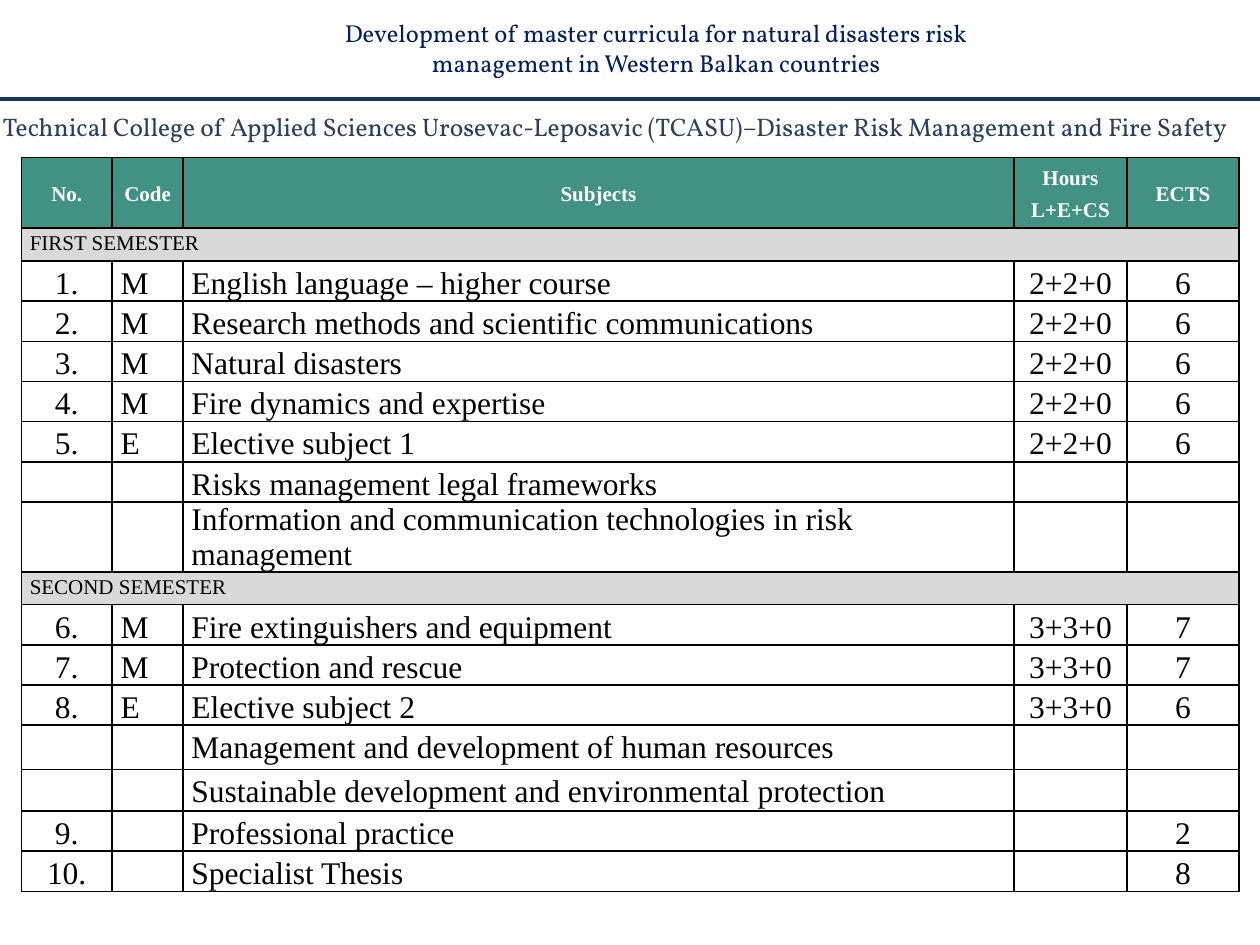
from dataclasses import dataclass

import lxml.etree
import pptx
import pptx.dml.color
import pptx.enum.shapes
import pptx.enum.text
import pptx.oxml.ns
import pptx.util

Cm = pptx.util.Cm
Pt = pptx.util.Pt
ALIGN = pptx.enum.text.PP_ALIGN
ANCHOR = pptx.enum.text.MSO_ANCHOR
qn = pptx.oxml.ns.qn


@dataclass(frozen=True)
class Theme:
    display_font: str = "Vollkorn"
    table_font: str = "Times New Roman"
    project: str = "002060"
    title: str = "254061"
    rule: str = "17375E"
    header_fill: str = "419283"
    header_text: str = "FFFFFF"
    band_fill: str = "D9D9D9"
    ink: str = "000000"
    project_size: float = 14
    title_size: float = 14.5
    label_size: float = 12
    body_size: float = 18
    rule_width: float = 2
    border_width: float = 1


THEME = Theme()

# Widths and heights in centimetres
COLUMN_WIDTHS = (1.83, 1.43, 16.75, 2.28, 2.26)
COLUMN_ALIGNS = (ALIGN.CENTER, ALIGN.LEFT, ALIGN.LEFT, ALIGN.CENTER, ALIGN.CENTER)
HEADER_HEIGHT, BAND_HEIGHT, ROW_HEIGHT = 1.42, 0.66, 0.81
TALL_ROWS = {8: 1.41, 13: 0.89, 14: 0.84}
SINGLE_SPACED_ROW = 8

HEADINGS = ("No.", "Code", "Subjects", "Hours\nL+E+CS", "ECTS")
# A row with one entry is a semester band
ROWS = (
    ("FIRST SEMESTER",),
    ("1.", "M", "English language – higher course", "2+2+0", "6"),
    ("2.", "M", "Research methods and scientific communications", "2+2+0", "6"),
    ("3.", "M", "Natural disasters", "2+2+0", "6"),
    ("4.", "M", "Fire dynamics and expertise", "2+2+0", "6"),
    ("5.", "E", "Elective subject 1", "2+2+0", "6"),
    ("", "", "Risks management legal frameworks", "", ""),
    ("", "", "Information and communication technologies in risk management", "", ""),
    ("SECOND SEMESTER",),
    ("6.", "M", "Fire extinguishers and equipment", "3+3+0", "7"),
    ("7.", "M", "Protection and rescue", "3+3+0", "7"),
    ("8.", "E", "Elective subject 2", "3+3+0", "6"),
    ("", "", "Management and development of human resources", "", ""),
    ("", "", "Sustainable development and environmental protection", "", ""),
    ("9.", "", "Professional practice", "", "2"),
    ("10.", "", "Specialist Thesis", "", "8"),
)


def rgb(value):
    return pptx.dml.color.RGBColor.from_string(value)


def style_paragraph(paragraph, font, size, color, align, bold=False):
    paragraph.alignment = align
    paragraph.font.name = font
    paragraph.font.size = Pt(size)
    paragraph.font.bold = bold
    paragraph.font.color.rgb = rgb(color)


def fill_frame(box, text, size, color, align, anchor):
    frame = box.text_frame
    frame.text = text
    frame.word_wrap = True
    frame.auto_size = pptx.enum.text.MSO_AUTO_SIZE.NONE
    frame.vertical_anchor = anchor
    paragraph = frame.paragraphs[0]
    paragraph.space_before = Pt(0)
    style_paragraph(paragraph, THEME.display_font, size, color, align)


def add_project_header(page, left, top, width, height):
    """Project name with the full-width rule below it."""
    box = page.shapes.add_textbox(left, top, width, height)
    fill_frame(
        box,
        "Development of master curricula for natural disasters risk "
        "management in Western Balkan countries",
        THEME.project_size, THEME.project, ALIGN.CENTER, ANCHOR.MIDDLE,
    )
    rule_top = top + height + Cm(0.5)
    rule = page.shapes.add_connector(
        pptx.enum.shapes.MSO_CONNECTOR.STRAIGHT, 0, rule_top, Cm(25.4), rule_top
    )
    rule.line.color.rgb = rgb(THEME.rule)
    rule.line.width = Pt(THEME.rule_width)
    properties = rule._element.find(qn("p:spPr"))
    lxml.etree.SubElement(properties, qn("a:effectLst"))


def place_title(page, left, top, width, height):
    title = page.shapes.title
    title.left, title.top, title.width, title.height = left, top, width, height
    fill_frame(
        title,
        "Technical College of Applied Sciences Urosevac-Leposavic "
        "(TCASU)–Disaster Risk Management and Fire Safety",
        THEME.title_size, THEME.title, ALIGN.LEFT, ANCHOR.TOP,
    )


def add_borders(cell):
    properties = cell._tc.get_or_add_tcPr()
    for index, side in enumerate(("lnL", "lnR", "lnT", "lnB")):
        line = lxml.etree.Element(qn(f"a:{side}"), w=str(Pt(THEME.border_width)))
        fill = lxml.etree.SubElement(line, qn("a:solidFill"))
        lxml.etree.SubElement(fill, qn("a:srgbClr"), val=THEME.ink)
        properties.insert(index, line)


def format_cell(cell, text="", size=THEME.body_size, color=THEME.ink, align=ALIGN.LEFT,
                fill=None, bold=False, spacing=1.15, after=0, anchor=ANCHOR.TOP):
    cell.margin_left = cell.margin_right = Cm(0.17)
    cell.margin_top = cell.margin_bottom = 0
    cell.vertical_anchor = anchor
    if fill:
        cell.fill.solid()
        cell.fill.fore_color.rgb = rgb(fill)
    else:
        cell.fill.background()
    add_borders(cell)
    cell.text = text
    for paragraph in cell.text_frame.paragraphs:
        paragraph.line_spacing = spacing
        paragraph.space_after = Pt(after)
        style_paragraph(paragraph, THEME.table_font, size, color, align, bold)


def row_height(index, entries):
    if len(entries) == 1:
        return BAND_HEIGHT
    return TALL_ROWS.get(index, ROW_HEIGHT)


def add_curriculum(page, left, top):
    heights = [HEADER_HEIGHT]
    heights += [row_height(index, row) for index, row in enumerate(ROWS, 1)]
    table = page.shapes.add_table(
        len(heights), len(COLUMN_WIDTHS), left, top,
        Cm(sum(COLUMN_WIDTHS)), Cm(sum(heights)),
    ).table
    table.first_row = table.horz_banding = False
    for column, width in zip(table.columns, COLUMN_WIDTHS):
        column.width = Cm(width)
    for row, height in zip(table.rows, heights):
        row.height = Cm(height)

    for column, heading in enumerate(HEADINGS):
        format_cell(table.cell(0, column), heading, THEME.label_size,
                    THEME.header_text, ALIGN.CENTER, THEME.header_fill,
                    bold=True, after=3, anchor=ANCHOR.MIDDLE)
    last = len(COLUMN_WIDTHS) - 1
    for index, entries in enumerate(ROWS, 1):
        if len(entries) == 1:
            table.cell(index, 0).merge(table.cell(index, last))
            for column in range(last + 1):
                format_cell(table.cell(index, column), entries[0] if column == 0 else "",
                            THEME.label_size, fill=THEME.band_fill, after=3)
            continue
        spacing = 1.0 if index == SINGLE_SPACED_ROW else 1.15
        for column, (text, align) in enumerate(zip(entries, COLUMN_ALIGNS)):
            format_cell(table.cell(index, column), text, align=align, spacing=spacing)


def main():
    deck = pptx.Presentation()
    deck.slide_width, deck.slide_height = Cm(25.4), Cm(19.05)
    page = deck.slides.add_slide(deck.slide_layouts[5])
    add_project_header(page, Cm(5.51), Cm(0.43), Cm(15.44), Cm(1.07))
    place_title(page, Cm(-0.2), Cm(2.11), Cm(26.04), Cm(0.91))
    add_curriculum(page, Cm(0.43), Cm(3.18))
    deck.save("out.pptx")


if __name__ == "__main__":
    main()
